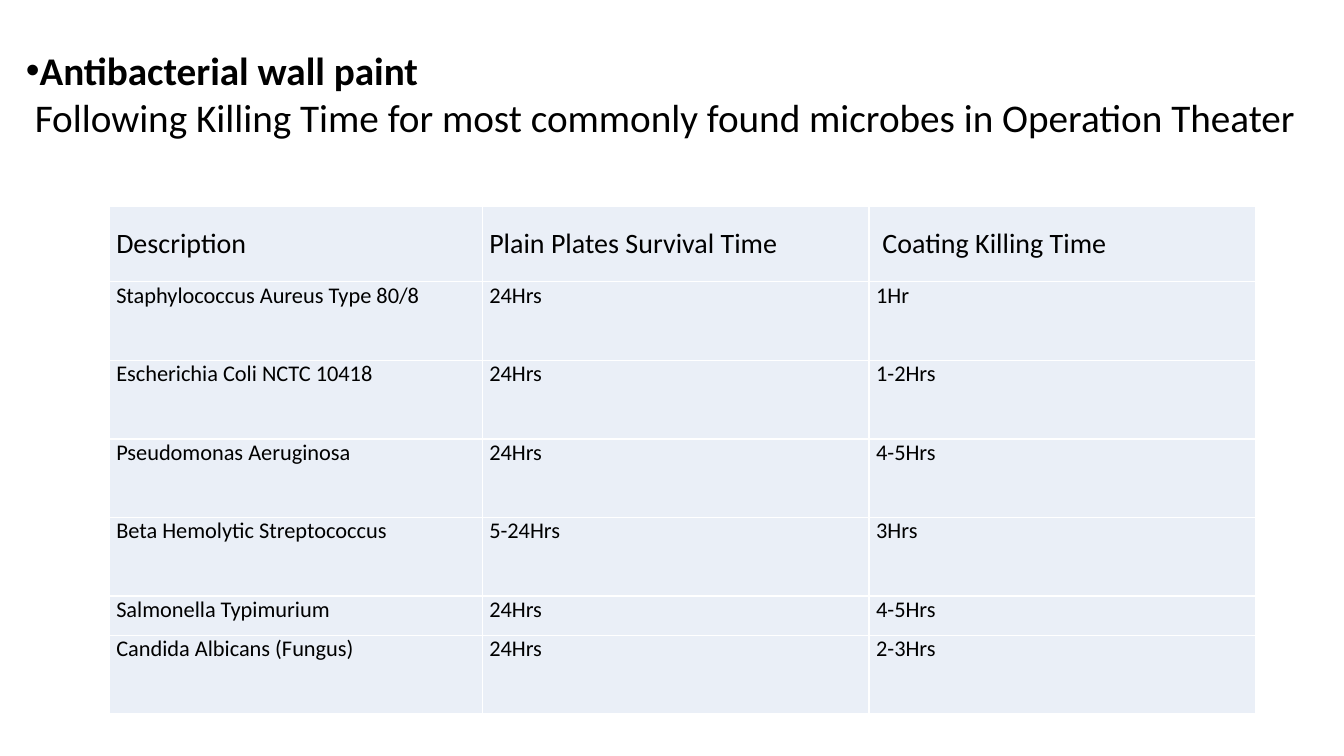
from lxml.etree import SubElement
from pptx import Presentation
from pptx.dml.color import RGBColor
from pptx.enum.text import MSO_ANCHOR, MSO_AUTO_SIZE, PP_ALIGN
from pptx.oxml.ns import qn
from pptx.util import Cm, Pt

BLACK = RGBColor(0x00, 0x00, 0x00)
WHITE = RGBColor(0xFF, 0xFF, 0xFF)
PALE_BLUE = RGBColor(0xEA, 0xEF, 0xF7)
FONT = "Calibri"


def add_text(paragraph, text, size, bold=False):
    run = paragraph.add_run()
    run.text = text
    run.font.name = FONT
    run.font.size = Pt(size)
    run.font.bold = bold
    run.font.color.rgb = BLACK


def add_borders(cell):
    properties = cell._tc.get_or_add_tcPr()
    for position, side in enumerate(("a:lnL", "a:lnR", "a:lnT", "a:lnB")):
        line = properties.makeelement(qn(side), {"w": str(Pt(1))})
        fill = SubElement(line, qn("a:solidFill"))
        SubElement(fill, qn("a:srgbClr"), val=str(WHITE))
        properties.insert(position, line)


presentation = Presentation()
presentation.slide_width = Cm(33.87)
presentation.slide_height = Cm(19.05)
slide = presentation.slides.add_slide(presentation.slide_layouts[5])

# Title: bulleted heading and explanatory line
title = slide.shapes.title
title.left, title.top, title.width, title.height = Cm(0.4), Cm(1.05), Cm(33.07), Cm(3.43)
frame = title.text_frame
frame.word_wrap = False
frame.auto_size = MSO_AUTO_SIZE.NONE
frame.vertical_anchor = MSO_ANCHOR.TOP
heading = frame.paragraphs[0]
explanation = frame.add_paragraph()
add_text(heading, "Antibacterial wall paint", 28, bold=True)
add_text(explanation, " Following Killing Time for most commonly found microbes in Operation Theater", 28)
for paragraph in frame.paragraphs:
    paragraph.alignment = PP_ALIGN.LEFT
heading_properties = heading._p.get_or_add_pPr()
heading_properties.set("marL", "0")
heading_properties.set("indent", "0")
SubElement(heading_properties, qn("a:buFont"), typeface="Arial")
SubElement(heading_properties, qn("a:buChar"), char="•")

# Table of killing times
ROWS = [
    ("Description", "Plain Plates Survival Time", " Coating Killing Time"),
    ("Staphylococcus Aureus Type 80/8", "24Hrs", "1Hr"),
    ("Escherichia Coli NCTC 10418", "24Hrs", "1-2Hrs"),
    ("Pseudomonas Aeruginosa", "24Hrs", "4-5Hrs"),
    ("Beta Hemolytic Streptococcus", "5-24Hrs", "3Hrs"),
    ("Salmonella Typimurium", "24Hrs", "4-5Hrs"),
    ("Candida Albicans (Fungus)", "24Hrs", "2-3Hrs"),
]
COLUMN_WIDTHS = [9.4, 9.75, 9.75]
ROW_HEIGHTS = [1.9] + [1.98] * 4 + [0.99, 1.98]

table = slide.shapes.add_table(
    len(ROWS), len(COLUMN_WIDTHS), Cm(2.75), Cm(5.2),
    Cm(sum(COLUMN_WIDTHS)), Cm(sum(ROW_HEIGHTS)),
).table
for column, width in zip(table.columns, COLUMN_WIDTHS):
    column.width = Cm(width)
for row, height in zip(table.rows, ROW_HEIGHTS):
    row.height = Cm(height)

for row_index, texts in enumerate(ROWS):
    is_header = row_index == 0
    for column_index, text in enumerate(texts):
        cell = table.cell(row_index, column_index)
        cell.fill.solid()
        cell.fill.fore_color.rgb = PALE_BLUE
        cell.margin_left = cell.margin_right = Cm(0.18)
        cell.margin_top = cell.margin_bottom = 0
        cell.vertical_anchor = MSO_ANCHOR.MIDDLE if is_header else MSO_ANCHOR.TOP
        add_borders(cell)
        paragraph = cell.text_frame.paragraphs[0]
        is_microbe = column_index == 0 and not is_header
        paragraph.alignment = PP_ALIGN.LEFT if is_microbe else PP_ALIGN.JUSTIFY
        add_text(paragraph, text, 20 if is_header else 16)

presentation.save("out.pptx")
